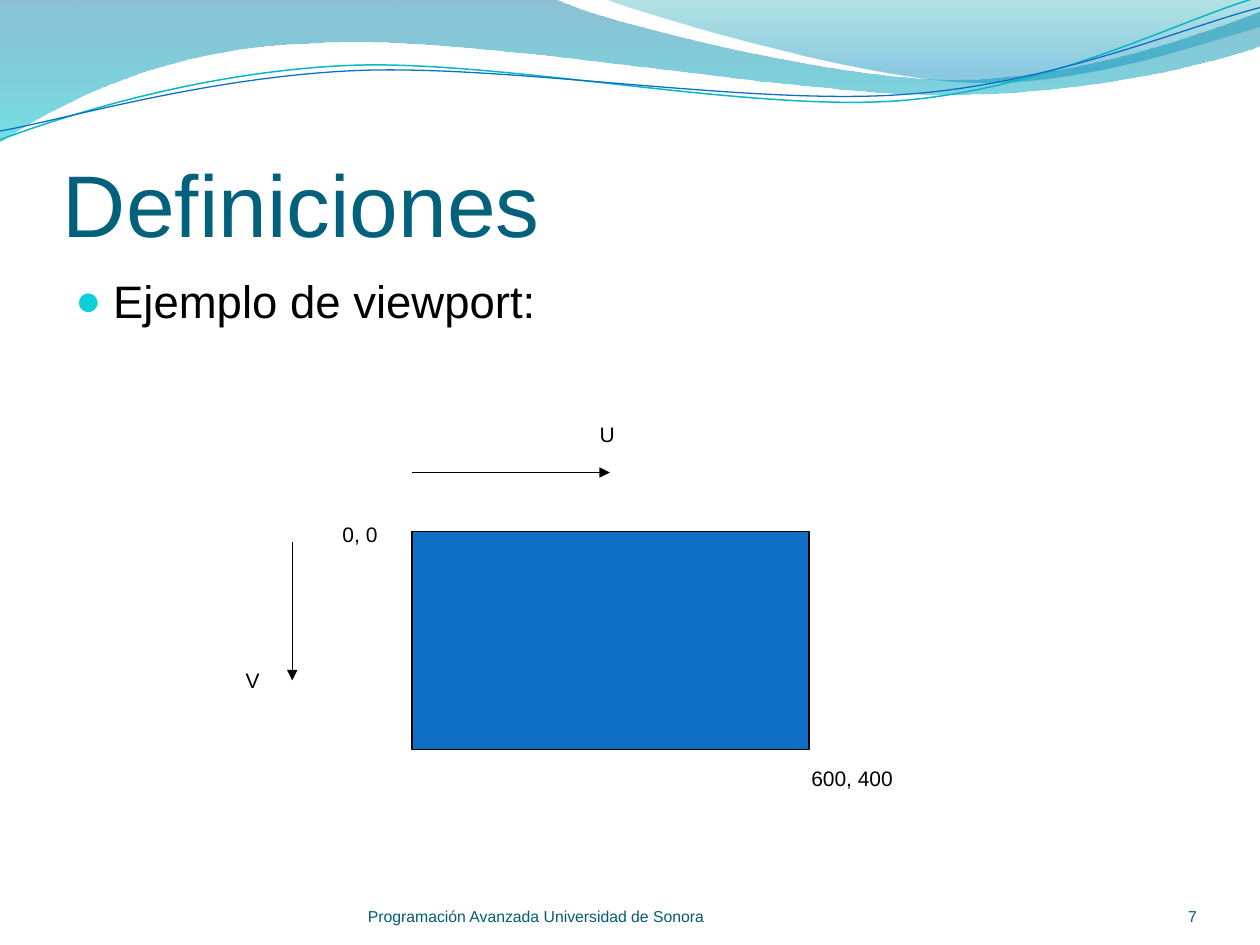
from math import cos, radians, sin
from pptx import Presentation
from pptx.dml.color import RGBColor
from pptx.enum.shapes import MSO_CONNECTOR, MSO_SHAPE
from pptx.enum.text import MSO_ANCHOR, MSO_AUTO_SIZE, PP_ALIGN
from pptx.oxml.ns import qn
from pptx.util import Inches, Pt
from lxml.etree import SubElement

COLORS = {
    "title": "04617B", "footer": "045D75", "text": "000000", "bullet": "0BD0D9",
    "viewport": "0F6FC6", "teal": "0AB8BF", "black": "000000",
    "deep blue": "0074A1", "cyan": "00C6CF", "sea": "00A1A9", "sky": "008BBF",
}

# Waves: start point, then lines (2 numbers) and Bézier curves (6 numbers)
BANDS = [
    {"box": (-0.01, -0.01, 10.02, 1.14), "turn": 0, "start": (0, 0),
     "steps": [(4.4, -0.01), (4.76, 0.17, 6.64, 0.63, 7.58, 0.63),
               (8.53, 0.63, 9.58, 0.26, 10, 0.09), (10.01, 0.36),
               (9.83, 0.44, 8.7, 0.76, 7.46, 0.75),
               (6.22, 0.75, 3.82, 0.28, 2.57, 0.34),
               (1.29, 0.36, 0.46, 0.83, -0.01, 1.13), (0, 0)],
     "stops": [(0, "deep blue", 45), (1, "cyan", 55)]},
    {"box": (4.79, -0.01, 5.21, 0.7), "turn": 0, "start": (4.79, -0.01),
     "steps": [(5.09, 0.11, 6.82, 0.62, 7.69, 0.65),
               (8.56, 0.69, 9.61, 0.32, 10, 0.21), (10, 0), (4.79, -0.01)],
     "stops": [(0, "sea", 30), (0.8, "sky", 45)]},
]
STRANDS = [
    {"box": (-0.02, 0.22, 10.02, 0.71), "turn": -2.7, "start": (0, 1.11),
     "steps": [(0.48, 0.93, 1.58, 0.57, 2.77, 0.52),
               (3.95, 0.47, 5.93, 0.89, 7.13, 0.8),
               (8.33, 0.71, 9.38, 0.15, 9.98, -0.02)],
     "line": ("teal", 0.85)},
    {"box": (-0.02, 0.3, 10.03, 0.58), "turn": -2.7, "start": (0, 1.04),
     "steps": [(0.47, 0.96, 1.64, 0.61, 2.83, 0.56),
               (4.03, 0.51, 5.97, 0.84, 7.17, 0.75),
               (8.36, 0.67, 9.41, 0.21, 10, 0.06)],
     "line": ("viewport", 0.75)},
]

# Text: wording, place, size, colour, frame format
FOOTER = {"vertical_anchor": MSO_ANCHOR.BOTTOM, "margin_left": 0, "margin_right": 0,
          "margin_top": 0, "margin_bottom": 0}
TITLE = {**FOOTER, "margin_top": Inches(0.05)}
LABEL = {"word_wrap": False, "auto_size": MSO_AUTO_SIZE.SHAPE_TO_FIT_TEXT}
HEADING = ("Definiciones", (0.5, 0.77, 9, 1.25), 50, "title", TITLE)
BODY = ("Ejemplo de viewport:", (0.5, 2.12, 9, 4.8), 26, "text", {})
COURSE = ("Programación Avanzada Universidad de Sonora", (2.92, 6.95, 3.67, 0.4),
          9, "footer", FOOTER)
NUMBER = ("7", (8.67, 6.95, 0.83, 0.4), 9, "footer", FOOTER)
LABELS = [("0, 0", (2.62, 4.09, 0.53, 0.3)), ("600, 400", (6.34, 6.03, 0.85, 0.3)),
          ("U", (4.66, 3.3, 0.32, 0.3)), ("V", (1.85, 5.25, 0.32, 0.3))]

VIEWPORT = (3.27, 4.22, 3.15, 1.73)
AXES = [(3.27, 3.75, 4.84, 3.75), (2.32, 4.3, 2.32, 5.4)]


def color(name):
    return RGBColor.from_string(COLORS[name])


def inches(values):
    return [Inches(value) for value in values]


def local_point(x, y, box, turn):
    """Give a page point in the frame of a box that is turned about its centre."""
    left, top, width, height = box
    across, down = x - left - width / 2, y - top - height / 2
    angle = radians(-turn)
    return inches((across * cos(angle) - down * sin(angle) + width / 2,
                   across * sin(angle) + down * cos(angle) + height / 2))


def add_wave(page, wave, close):
    box, turn = wave["box"], wave["turn"]
    builder = page.shapes.build_freeform(0, 0, scale=1.0)
    builder.add_line_segments([inches(box[2:])], close=False)
    shape = builder.convert_to_shape()
    for key, value in zip(("left", "top", "width", "height"), inches(box)):
        setattr(shape, key, value)
    shape.rotation = turn
    shape.shadow.inherit = False

    # Curves are written into the outline, as the builder knows lines only
    outline = next(shape._element.iter(qn("a:path")))
    for child in list(outline):
        outline.remove(child)
    for key, value in zip("wh", inches(box[2:])):
        outline.set(key, str(value))
    for number, step in enumerate([wave["start"], *wave["steps"]]):
        tag = "a:moveTo" if number == 0 else "a:lnTo" if len(step) == 2 else "a:cubicBezTo"
        segment = SubElement(outline, qn(tag))
        for x, y in zip(step[::2], step[1::2]):
            across, down = local_point(x, y, box, turn)
            SubElement(segment, qn("a:pt"), x=str(across), y=str(down))
    if close:
        SubElement(outline, qn("a:close"))
    return shape


def set_line(shape, name, width):
    shape.line.color.rgb = color(name)
    shape.line.width = Pt(width)


def add_text(page, text, place, size, name, frame_format):
    box = page.shapes.add_textbox(*inches(place))
    frame = box.text_frame
    for key, value in {"word_wrap": True, **frame_format}.items():
        setattr(frame, key, value)
    para = frame.paragraphs[0]
    span = para.add_run()
    span.text = text
    for key, value in {"name": "Arial", "size": Pt(size)}.items():
        setattr(span.font, key, value)
    span.font.color.rgb = color(name)
    return para


def add_bullet(para):
    props = para._p.get_or_add_pPr()
    props.set("marL", str(Inches(0.3)))
    props.set("indent", str(-Inches(0.3)))
    tint = SubElement(props, qn("a:buClr"))
    SubElement(tint, qn("a:srgbClr"), val=COLORS["bullet"])
    SubElement(props, qn("a:buSzPct"), val="95000")
    SubElement(props, qn("a:buFont"), typeface="Arial")
    SubElement(props, qn("a:buChar"), char="●")


def add_arrow(page, ends):
    arrow = page.shapes.add_connector(MSO_CONNECTOR.STRAIGHT, *inches(ends))
    set_line(arrow, "black", 0.75)
    SubElement(arrow.line._get_or_add_ln(), qn("a:tailEnd"), type="triangle")
    SubElement(arrow._element.spPr, qn("a:effectLst"))


def main():
    deck = Presentation()
    deck.slide_width, deck.slide_height = inches((10, 7.5))
    page = deck.slides.add_slide(deck.slide_layouts[6])

    # Waves along the top
    for band in BANDS:
        shape = add_wave(page, band, close=True)
        shape.line.fill.background()
        shape.fill.gradient()
        shape.fill.gradient_angle = 270
        for stop, (position, name, opacity) in zip(shape.fill.gradient_stops, band["stops"]):
            stop.position = position
            stop.color.rgb = color(name)
            SubElement(stop._gs[0], qn("a:alpha"), val=str(opacity * 1000))
    for strand in STRANDS:
        shape = add_wave(page, strand, close=False)
        shape.fill.background()
        set_line(shape, *strand["line"])

    # Title, body and footer
    add_text(page, *HEADING)
    body = add_text(page, *BODY)
    body.space_before = Pt(5)
    add_bullet(body)
    add_text(page, *COURSE)
    add_text(page, *NUMBER).alignment = PP_ALIGN.RIGHT

    # Viewport with its axes and labels
    viewport = page.shapes.add_shape(MSO_SHAPE.RECTANGLE, *inches(VIEWPORT))
    viewport.shadow.inherit = False
    viewport.fill.solid()
    viewport.fill.fore_color.rgb = color("viewport")
    set_line(viewport, "black", 0.75)
    for ends in AXES:
        add_arrow(page, ends)
    for text, place in LABELS:
        add_text(page, text, place, 12, "text", LABEL)

    deck.save("out.pptx")


if __name__ == "__main__":
    main()
